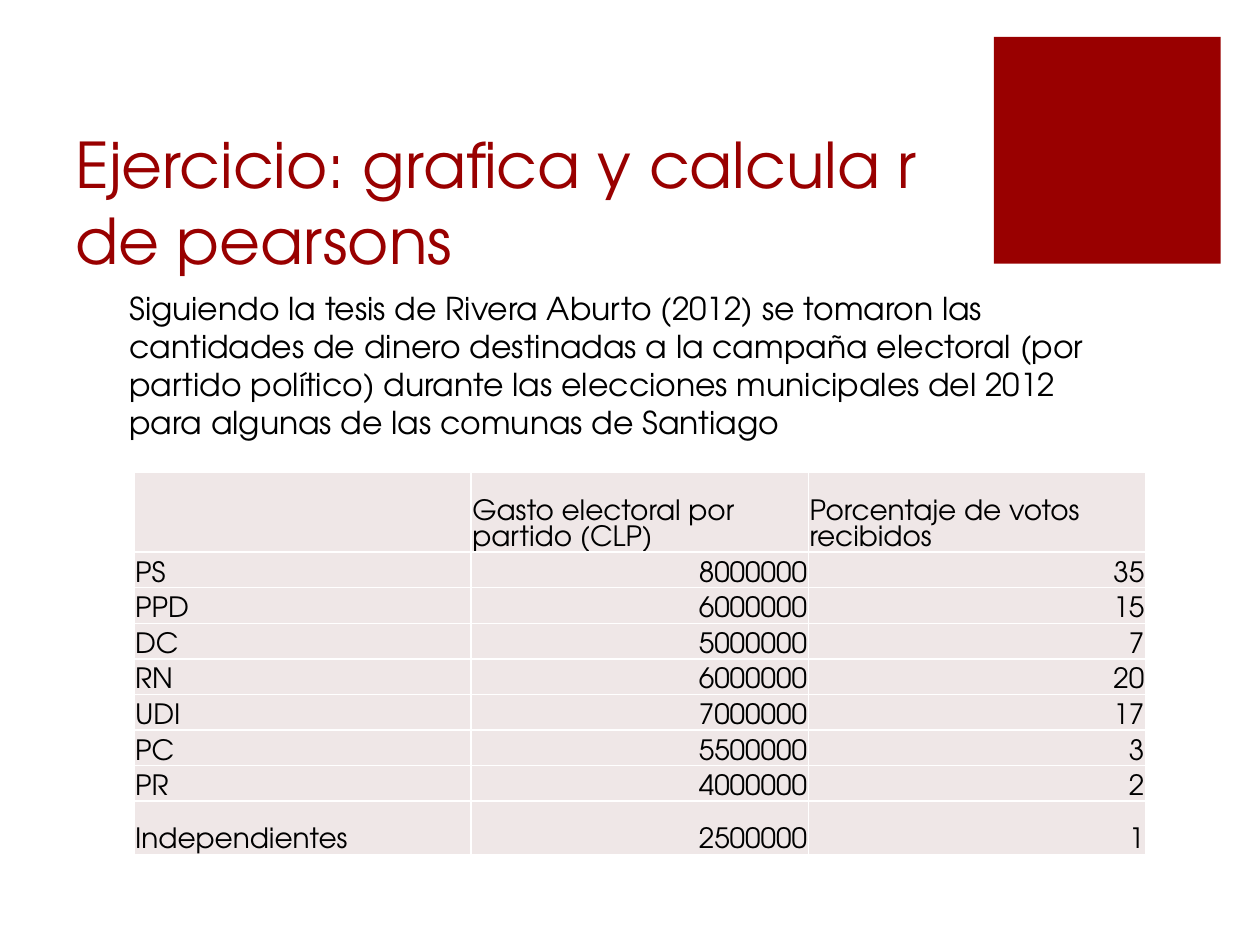
import pptx
import pptx.util
import pptx.dml.color
import pptx.enum.shapes
import pptx.enum.text
import pptx.oxml

Pt = pptx.util.Pt
ANCHOR = pptx.enum.text.MSO_ANCHOR
ALIGN = pptx.enum.text.PP_ALIGN
FONT = "TeX Gyre Adventor"
RED, BLACK, WHITE, ROSE = "990000", "000000", "FFFFFF", "EFE7E7"
DRAWING_NS = "http://schemas.openxmlformats.org/drawingml/2006/main"

HEADINGS = ["", "Gasto electoral por partido (CLP)", "Porcentaje de votos recibidos"]
PARTIES = [
    ("PS", 8000000, 35),
    ("PPD", 6000000, 15),
    ("DC", 5000000, 7),
    ("RN", 6000000, 20),
    ("UDI", 7000000, 17),
    ("PC", 5500000, 3),
    ("PR", 4000000, 2),
    ("Independientes", 2500000, 1),
]


def color(value):
    return pptx.dml.color.RGBColor.from_string(value)


def write(frame, text, size, text_color):
    frame.text = text
    paragraph = frame.paragraphs[0]
    for font in [paragraph.font] + [run.font for run in paragraph.runs]:
        font.name = FONT
        font.size = Pt(size)
        font.color.rgb = color(text_color)
    return paragraph


def add_square(slide, left, top, side):
    square = slide.shapes.add_shape(
        pptx.enum.shapes.MSO_SHAPE.RECTANGLE, Pt(left), Pt(top), Pt(side), Pt(side))
    square.shadow.inherit = False
    square.fill.solid()
    square.fill.fore_color.rgb = color(RED)
    square.line.fill.background()


def add_text(slide, box, text, size, text_color, anchor):
    frame = slide.shapes.add_textbox(*map(Pt, box)).text_frame
    frame.word_wrap = True
    frame.vertical_anchor = anchor
    write(frame, text, size, text_color)


def set_borders(cell, line_color, width):
    properties = cell._tc.get_or_add_tcPr()
    for position, side in enumerate(("lnL", "lnR", "lnT", "lnB")):
        border = pptx.oxml.parse_xml(
            f'<a:{side} xmlns:a="{DRAWING_NS}" w="{Pt(width)}"><a:solidFill>'
            f'<a:srgbClr val="{line_color}"/></a:solidFill></a:{side}>')
        properties.insert(position, border)


def fill_cell(cell, value):
    cell.margin_left = cell.margin_right = cell.margin_top = Pt(0.72)
    cell.margin_bottom = Pt(0)
    cell.vertical_anchor = ANCHOR.BOTTOM
    cell.fill.solid()
    cell.fill.fore_color.rgb = color(ROSE)
    set_borders(cell, WHITE, 1)
    paragraph = write(cell.text_frame, str(value), 16, BLACK)
    if isinstance(value, int):
        paragraph.alignment = ALIGN.RIGHT


def add_spending_table(slide, left, top, column_width):
    rows = [HEADINGS, *PARTIES]
    heights = [45.4] + [20.33] * (len(PARTIES) - 1) + [30.4]
    table = slide.shapes.add_table(
        len(rows), len(HEADINGS), Pt(left), Pt(top),
        Pt(column_width * len(HEADINGS)), Pt(sum(heights))).table
    for column in table.columns:
        column.width = Pt(column_width)
    for row, values, height in zip(table.rows, rows, heights):
        row.height = Pt(height)
        for cell, value in zip(row.cells, values):
            fill_cell(cell, value)


def main():
    deck = pptx.Presentation()
    deck.slide_width, deck.slide_height = Pt(720), Pt(540)
    slide = deck.slides.add_slide(deck.slide_layouts[6])
    add_square(slide, 568, 21.1, 129.6)
    add_text(slide, (36, 71.8, 512.6, 90),
             "Ejercicio: grafica y calcula r de pearsons", 36, RED, ANCHOR.BOTTOM)
    add_spending_table(slide, 76.5, 270.1, 192.7)
    add_text(slide, (66.8, 161.8, 572.4, 94.3),
             "Siguiendo la tesis de Rivera Aburto (2012) se tomaron las cantidades de dinero "
             "destinadas a la campaña electoral (por partido político) durante las elecciones "
             "municipales del 2012 para algunas de las comunas de Santiago",
             18, BLACK, ANCHOR.TOP)
    deck.save("out.pptx")


if __name__ == "__main__":
    main()
